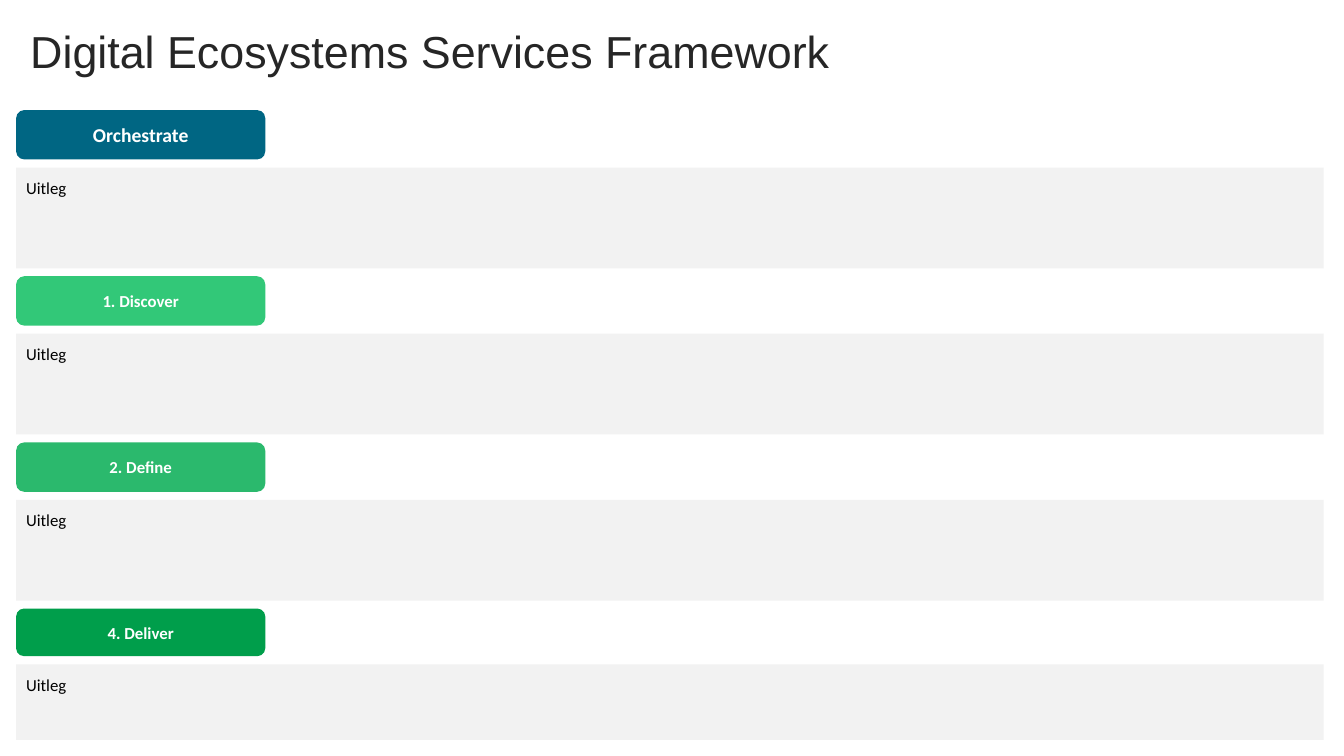
from pptx import Presentation
from pptx.util import Pt
from pptx.dml.color import RGBColor as Rgb
from pptx.enum.shapes import MSO_SHAPE as Shape
from pptx.enum.text import MSO_ANCHOR as Anchor, MSO_AUTO_SIZE as Auto, PP_ALIGN as Align

WHITE = Rgb(0xFF, 0xFF, 0xFF)
BLACK = Rgb(0x00, 0x00, 0x00)
INK = Rgb(0x26, 0x26, 0x26)
GREY = Rgb(0xF2, 0xF2, 0xF2)
BLUE = Rgb(0x00, 0x66, 0x83)
LIGHT = Rgb(0x32, 0xC8, 0x78)
GREEN = Rgb(0x2B, 0xB9, 0x6D)
DEEP = Rgb(0x00, 0x9E, 0x4B)


class Page:
    head = "Arial"
    body = "Calibri"

    def __init__(self, slide):
        self.slide = slide

    def label(self, shape, text, font, size, color, bold, align, anchor, pads):
        frame = shape.text_frame
        frame.text = text
        frame.word_wrap = True
        frame.auto_size = Auto.NONE
        frame.vertical_anchor = anchor
        (frame.margin_left, frame.margin_top,
         frame.margin_right, frame.margin_bottom) = [Pt(pad) for pad in pads]
        line = frame.paragraphs[0]
        line.alignment = align
        face = line.runs[0].font
        face.name, face.size, face.bold = font, Pt(size), bold
        face.color.rgb = color
        return line

    def title(self, text, left, top, width, height):
        shape = self.slide.shapes.title
        shape.left, shape.top = Pt(left), Pt(top)
        shape.width, shape.height = Pt(width), Pt(height)
        line = self.label(shape, text, self.head, 32, INK, False,
                          Align.LEFT, Anchor.TOP, (21.6, 21.6, 7.2, 3.6))
        line.line_spacing = 0.9

    def block(self, kind, left, top, width, height, fill):
        shape = self.slide.shapes.add_shape(
            kind, Pt(left), Pt(top), Pt(width), Pt(height))
        shape.shadow.inherit = False
        shape.fill.solid()
        shape.fill.fore_color.rgb = fill
        shape.line.fill.background()
        return shape

    def panel(self, text, left, top, width, height):
        shape = self.block(Shape.RECTANGLE, left, top, width, height, GREY)
        self.label(shape, text, self.body, 12, BLACK, False,
                   Align.LEFT, Anchor.TOP, [7.2] * 4)

    def tag(self, text, left, top, width, height, fill, size):
        shape = self.block(Shape.ROUNDED_RECTANGLE, left, top, width, height, fill)
        self.label(shape, text, self.body, size, WHITE, True,
                   Align.CENTER, Anchor.MIDDLE, [3.6] * 4)


def main():
    deck = Presentation()
    deck.slide_width, deck.slide_height = Pt(960), Pt(540)
    page = Page(deck.slides.add_slide(deck.slide_layouts[5]))

    # Heading
    page.title("Digital Ecosystems Services Framework", 0, 0, 777, 70)

    # Phases: a label above a text panel, at an equal pitch
    left, start, pitch, gap = 11.5, 78.6, 118.7, 5.8
    phases = [
        ("Orchestrate", BLUE, 14, 35.3, 72),
        ("1. Discover", LIGHT, 12, 35.3, 72),
        ("2. Define", GREEN, 12, 35.3, 72),
        ("4. Deliver", DEEP, 12, 34, 54),
    ]
    for row, (name, fill, size, tall, deep) in enumerate(phases):
        top = start + row * pitch
        page.panel("Uitleg", left, top + tall + gap, 934, deep)
        page.tag(name, left, top, 178, tall, fill, size)

    deck.save("out.pptx")


if __name__ == "__main__":
    main()
